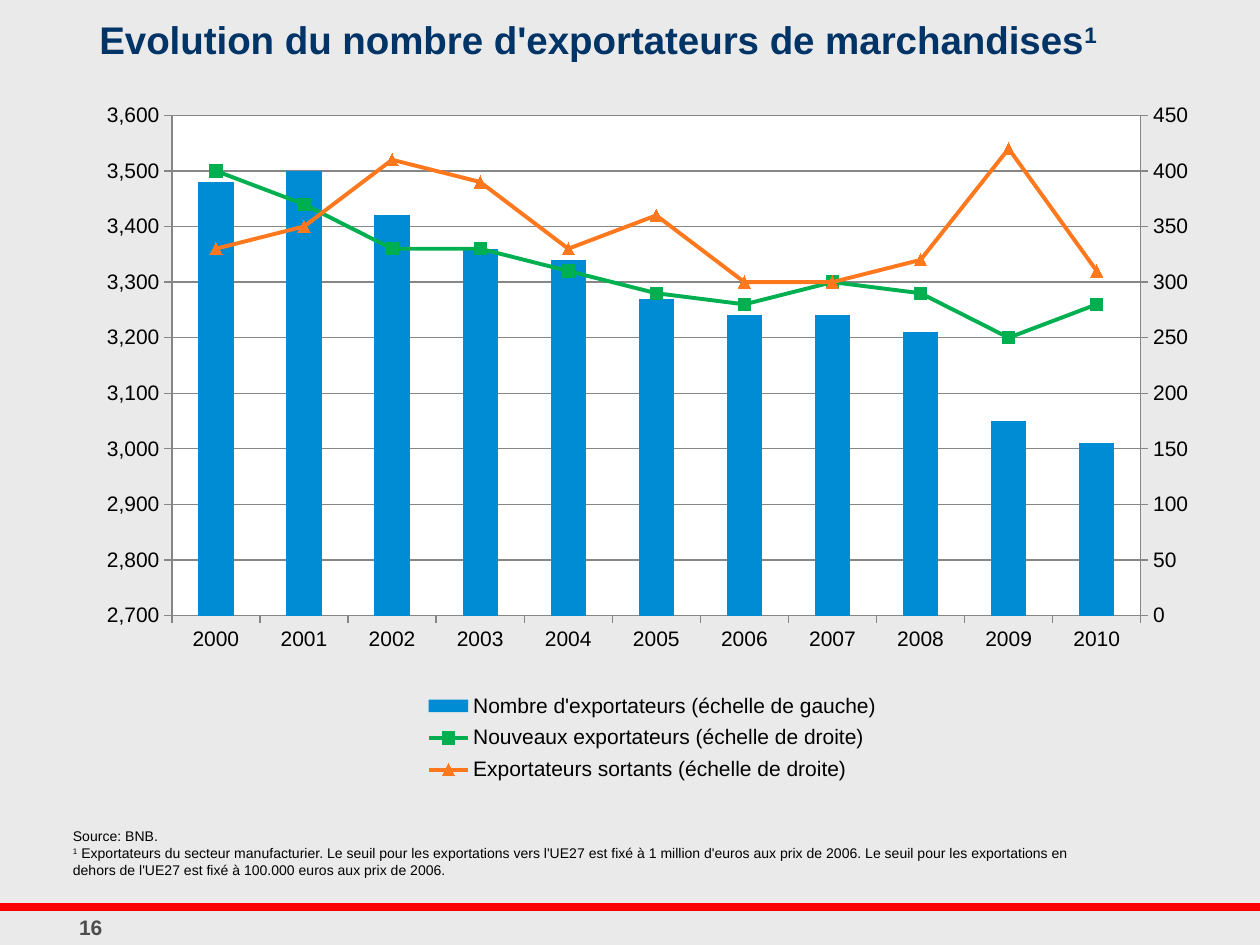
from dataclasses import dataclass
from typing import Optional

from lxml import etree
from pptx import Presentation
from pptx.chart.data import CategoryChartData
from pptx.dml.color import RGBColor
from pptx.enum.chart import XL_CHART_TYPE, XL_LEGEND_POSITION, XL_MARKER_STYLE, XL_TICK_MARK
from pptx.enum.shapes import MSO_CONNECTOR
from pptx.enum.text import PP_ALIGN
from pptx.oxml import parse_xml
from pptx.oxml.ns import qn
from pptx.util import Inches, Pt

COLUMN = XL_CHART_TYPE.COLUMN_CLUSTERED
BOTTOM = XL_LEGEND_POSITION.BOTTOM
SQUARE = XL_MARKER_STYLE.SQUARE
TRIANGLE = XL_MARKER_STYLE.TRIANGLE
OUTSIDE = XL_TICK_MARK.OUTSIDE
NO_TICK = XL_TICK_MARK.NONE
STRAIGHT = MSO_CONNECTOR.STRAIGHT
LEFT, CENTER = PP_ALIGN.LEFT, PP_ALIGN.CENTER
CHART_NS = "http://schemas.openxmlformats.org/drawingml/2006/chart"


@dataclass(frozen=True)
class Theme:
    font: str = "Arial"
    back: str = "EAEAEA"
    title: str = "003366"
    text: str = "000000"
    page: str = "4D4D4D"
    rule: str = "FF0000"
    axis: str = "868686"
    plot: str = "FFFFFF"
    big: float = 22
    label: float = 12
    note: float = 8


@dataclass(frozen=True)
class Series:
    name: str
    values: tuple[int, ...]
    color: str
    marker: Optional[XL_MARKER_STYLE] = None


@dataclass(frozen=True)
class Label:
    box: tuple[float, float, float, float]
    lines: tuple[tuple[str, ...], ...]
    size: float
    color: str
    bold: bool = False
    align: PP_ALIGN = LEFT


THEME = Theme()
YEARS = [str(year) for year in range(2000, 2011)]
SERIES = (
    Series("Nombre d'exportateurs (échelle de gauche)",
           (3480, 3500, 3420, 3360, 3340, 3270, 3240, 3240, 3210, 3050, 3010),
           "008CD4"),
    Series("Nouveaux exportateurs (échelle de droite)",
           (400, 370, 330, 330, 310, 290, 280, 300, 290, 250, 280),
           "00B050", SQUARE),
    Series("Exportateurs sortants (échelle de droite)",
           (330, 350, 410, 390, 330, 360, 300, 300, 320, 420, 310),
           "FF781D", TRIANGLE),
)
LABELS = (
    Label((0.69, 0.08, 8.84, 0.41),
          (("Evolution du nombre d'exportateurs de marchandises", "^1"),),
          THEME.big, THEME.title, True),
    Label((0.28, 7.21, 0.88, 0.29), (("16",),),
          THEME.label, THEME.page, True, CENTER),
    Label((0.48, 6.52, 8.38, 0.5),
          (("Source: BNB.",),
           ("^1", " Exportateurs du secteur manufacturier. Le seuil pour les "
            "exportations vers l'UE27 est fixé à 1 million d'euros aux prix de 2006. "
            "Le seuil pour les exportations en dehors de l'UE27 est fixé à "
            "100.000 euros aux prix de 2006.")),
          THEME.note, THEME.text),
)


def tint(hue: str) -> RGBColor:
    return RGBColor.from_string(hue)


def add_label(slide, label: Label) -> None:
    frame = slide.shapes.add_textbox(*map(Inches, label.box)).text_frame
    frame.word_wrap = True
    for pos, parts in enumerate(label.lines):
        para = frame.add_paragraph() if pos else frame.paragraphs[0]
        para.alignment = label.align
        font = para.font
        font.name, font.size, font.bold = THEME.font, Pt(label.size), label.bold
        font.color.rgb = tint(label.color)
        for part in parts:
            run = para.add_run()
            run.text = part.lstrip("^")
            if part.startswith("^"):
                run.font.fill.solid()
                run.font.color.rgb = tint(label.color)
                run.font._element.set("baseline", "30000")


def add_rule(slide) -> None:
    rule = slide.shapes.add_connector(
        STRAIGHT, Inches(0), Inches(7.2), Inches(10), Inches(7.2))
    rule.line.color.rgb = tint(THEME.rule)
    rule.line.width = Pt(4.5)
    etree.SubElement(rule._element.spPr, qn("a:effectLst"))


def set_layout(parent, index: int, box: tuple[float, ...], inner: bool) -> None:
    for old in parent.findall(qn("c:layout")):
        parent.remove(old)
    layout = etree.Element(qn("c:layout"))
    manual = etree.SubElement(layout, qn("c:manualLayout"))
    items = [("layoutTarget", "inner")] if inner else []
    items += [("xMode", "edge"), ("yMode", "edge")]
    items += list(zip("xywh", map(str, box)))
    for tag, value in items:
        etree.SubElement(manual, qn(f"c:{tag}")).set("val", value)
    parent.insert(index, layout)


def split_lines(area) -> None:
    bar = area.find(qn("c:barChart"))
    line = parse_xml(
        f'<c:lineChart xmlns:c="{CHART_NS}"><c:grouping val="standard"/>'
        '<c:varyColors val="0"/><c:marker val="1"/>'
        '<c:axId val="501"/><c:axId val="502"/></c:lineChart>')
    for pos, ser in enumerate(bar.findall(qn("c:ser"))[1:]):
        for flag in ser.findall(qn("c:invertIfNegative")):
            ser.remove(flag)
        line.insert(2 + pos, ser)
    bar.addnext(line)
    spot = area.find(qn("c:valAx"))
    for tag, own, other, hide, side, cross in (
            ("catAx", 501, 502, 1, "b", "autoZero"),
            ("valAx", 502, 501, 0, "r", "max")):
        scale = "" if hide else '<c:max val="450"/><c:min val="0"/>'
        unit = "" if hide else '<c:crossBetween val="between"/><c:majorUnit val="50"/>'
        axis = parse_xml(
            f'<c:{tag} xmlns:c="{CHART_NS}"><c:axId val="{own}"/>'
            f'<c:scaling><c:orientation val="minMax"/>{scale}</c:scaling>'
            f'<c:delete val="{hide}"/><c:axPos val="{side}"/>'
            '<c:numFmt formatCode="General" sourceLinked="0"/>'
            '<c:majorTickMark val="out"/><c:minorTickMark val="none"/>'
            '<c:tickLblPos val="nextTo"/>'
            f'<c:spPr><a:ln xmlns:a="http://schemas.openxmlformats.org/drawingml/2006/main" '
            f'w="9525"><a:solidFill><a:srgbClr val="{THEME.axis}"/></a:solidFill></a:ln></c:spPr>'
            f'<c:crossAx val="{other}"/><c:crosses val="{cross}"/>{unit}</c:{tag}>')
        spot.addnext(axis)
        spot = axis


def style_line(line, hue: str, width: float) -> None:
    line.color.rgb = tint(hue)
    line.width = Pt(width)


def add_chart(slide) -> None:
    data = CategoryChartData(number_format="General")
    data.categories = YEARS
    for item in SERIES:
        data.add_series(item.name, item.values)
    box = map(Inches, (0.71, 0.76, 8.85, 5.57))
    chart = slide.shapes.add_chart(COLUMN, *box, data).chart
    chart.has_title = False
    chart.font.name, chart.font.size = THEME.font, Pt(THEME.label)
    chart.font.color.rgb = tint(THEME.text)
    chart.has_legend = True
    legend = chart.legend
    legend.position = BOTTOM
    legend.include_in_layout = False
    legend.font.size = Pt(THEME.label)
    set_layout(legend._element, 1, (0.3, 0.84, 0.41, 0.15), False)

    value = chart.value_axis
    value.minimum_scale, value.maximum_scale, value.major_unit = 2700, 3600, 100
    value.tick_labels.number_format = "#,##0"
    value.tick_labels.number_format_is_linked = False
    style_line(value.major_gridlines.format.line, THEME.axis, 0.75)
    for axis in (chart.category_axis, value):
        axis.major_tick_mark, axis.minor_tick_mark = OUTSIDE, NO_TICK
        style_line(axis.format.line, THEME.axis, 0.75)

    area = chart._chartSpace.chart.plotArea
    split_lines(area)
    set_layout(area, 0, (0.074, 0.028, 0.869, 0.713), True)
    area.append(parse_xml(
        f'<c:spPr xmlns:c="{CHART_NS}" '
        'xmlns:a="http://schemas.openxmlformats.org/drawingml/2006/main">'
        f'<a:solidFill><a:srgbClr val="{THEME.plot}"/></a:solidFill></c:spPr>'))

    bars, lines = chart.plots
    bars.gap_width = 150
    bars.vary_by_categories = False
    fill = bars.series[0].format.fill
    fill.solid()
    fill.fore_color.rgb = tint(SERIES[0].color)
    for ser, item in zip(lines.series, SERIES[1:]):
        ser.smooth = False
        style_line(ser.format.line, item.color, 2.25)
        mark = ser.marker
        mark.style, mark.size = item.marker, 7
        mark.format.fill.solid()
        mark.format.fill.fore_color.rgb = tint(item.color)
        style_line(mark.format.line, item.color, 0.75)


def main() -> None:
    deck = Presentation()
    deck.slide_width, deck.slide_height = Inches(10), Inches(7.5)
    slide = deck.slides.add_slide(deck.slide_layouts[6])
    slide.background.fill.solid()
    slide.background.fill.fore_color.rgb = tint(THEME.back)
    add_rule(slide)
    add_chart(slide)
    for label in LABELS:
        add_label(slide, label)
    deck.save("out.pptx")


if __name__ == "__main__":
    main()
